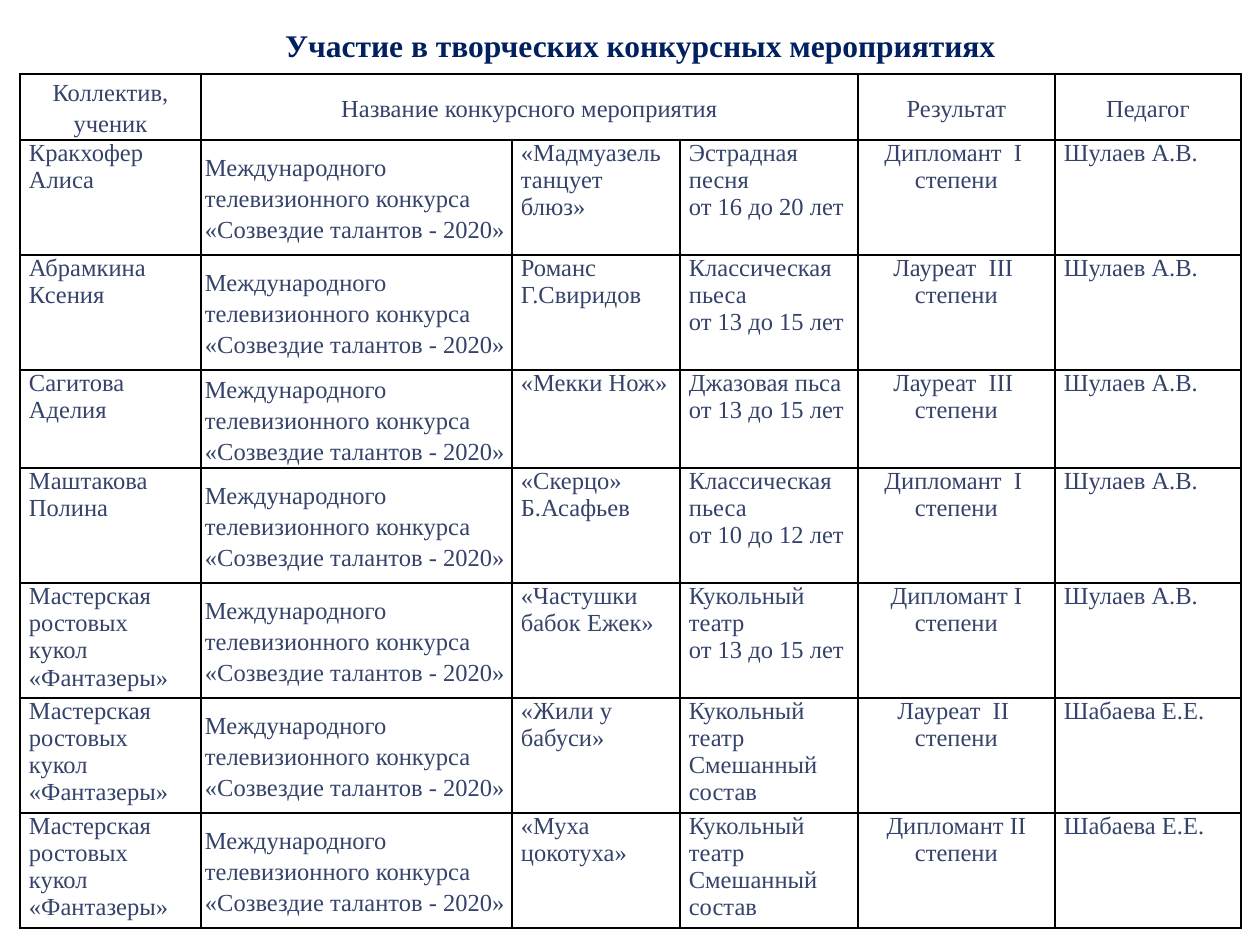
import pptx
import pptx.util
import pptx.dml.color
import pptx.enum.text
import pptx.oxml
import pptx.oxml.ns

EMU_PER_PX = 914400 // 126
CENTER = pptx.enum.text.PP_ALIGN.CENTER
LEFT = pptx.enum.text.PP_ALIGN.LEFT
MIDDLE = pptx.enum.text.MSO_ANCHOR.MIDDLE
TOP = pptx.enum.text.MSO_ANCHOR.TOP

COLUMN_WIDTHS = [181, 311, 168, 178, 197, 186]
ROW_HEIGHTS = [66, 115, 115, 98, 115, 115, 115, 115]
CONTEST_COLUMN = 1
RESULT_COLUMN = 4

HEADINGS = {0: "Коллектив, ученик", 1: "Название конкурсного мероприятия",
            4: "Результат", 5: "Педагог"}
CONTEST = "Международного телевизионного конкурса «Созвездие талантов - 2020»"
PUPPETEERS = "Мастерская ростовых кукол «Фантазеры»"
SHULAEV = "Шулаев А.В."
SHABAEVA = "Шабаева Е.Е."
ENTRIES = [
    ("Кракхофер Алиса", "«Мадмуазель танцует блюз»",
     "Эстрадная песня\nот 16 до 20 лет", "Дипломант  I  степени", SHULAEV),
    ("Абрамкина Ксения", "Романс Г.Свиридов",
     "Классическая пьеса\nот 13 до 15 лет", "Лауреат  III  степени", SHULAEV),
    ("Сагитова Аделия", "«Мекки Нож»",
     "Джазовая пьса\nот 13 до 15 лет", "Лауреат  III  степени", SHULAEV),
    ("Маштакова Полина", "«Скерцо» Б.Асафьев",
     "Классическая пьеса\nот 10 до 12 лет", "Дипломант  I  степени", SHULAEV),
    (PUPPETEERS, "«Частушки бабок Ежек»",
     "Кукольный театр\nот 13 до 15 лет", "Дипломант I степени", SHULAEV),
    (PUPPETEERS, "«Жили у бабуси»",
     "Кукольный театр\nСмешанный состав", "Лауреат  II  степени", SHABAEVA),
    (PUPPETEERS, "«Муха цокотуха»",
     "Кукольный театр\nСмешанный состав", "Дипломант II степени", SHABAEVA),
]


def px(length):
    return pptx.util.Emu(length * EMU_PER_PX)


def color(hex_string):
    return pptx.dml.color.RGBColor.from_string(hex_string)


class AwardsSlide:
    font_name = "Times New Roman"
    title_color = "002060"
    text_color = "35436A"
    border_color = "000000"

    def __init__(self, slide):
        self.slide = slide

    def format_text(self, frame, size, hex_string, align, bold=False):
        for paragraph in frame.paragraphs:
            paragraph.alignment = align
            for run in paragraph.runs:
                run.font.name = self.font_name
                run.font.size = pptx.util.Pt(size)
                run.font.bold = bold
                run.font.color.rgb = color(hex_string)

    def title(self, text, left, top, width, height):
        heading = self.slide.shapes.title
        heading.left, heading.top = px(left), px(top)
        heading.width, heading.height = px(width), px(height)
        frame = heading.text_frame
        frame.text = text
        frame.word_wrap = True
        frame.auto_size = pptx.enum.text.MSO_AUTO_SIZE.NONE
        frame.vertical_anchor = MIDDLE
        self.format_text(frame, 18, self.title_color, CENTER, bold=True)

    def table(self, left, top, column_widths, row_heights):
        grid = self.slide.shapes.add_table(
            len(row_heights), len(column_widths), px(left), px(top),
            px(sum(column_widths)), px(sum(row_heights))).table
        grid.first_row = grid.horz_banding = False
        for column, width in zip(grid.columns, column_widths):
            column.width = px(width)
        for row, height in zip(grid.rows, row_heights):
            row.height = px(height)
        for cell in grid.iter_cells():
            self.border(cell)
            cell.fill.background()
        return grid

    def border(self, cell):
        properties = cell._tc.get_or_add_tcPr()
        for side in ("lnL", "lnR", "lnT", "lnB"):
            properties.append(pptx.oxml.parse_xml(
                f'<a:{side} {pptx.oxml.ns.nsdecls("a")} w="12700"><a:solidFill>'
                f'<a:srgbClr val="{self.border_color}"/></a:solidFill></a:{side}>'))

    def cell(self, cell, text, align=LEFT, spacious=False):
        cell.text = text
        cell.margin_left = cell.margin_right = px(4 if spacious else 9)
        cell.margin_top = cell.margin_bottom = 0
        cell.vertical_anchor = MIDDLE if spacious else TOP
        self.format_text(cell.text_frame, 14, self.text_color, align)
        if spacious:
            for paragraph in cell.text_frame.paragraphs:
                paragraph.line_spacing = 1.15
                paragraph.space_after = pptx.util.Pt(10)


def main():
    presentation = pptx.Presentation()
    presentation.slide_width = pptx.util.Inches(10)
    presentation.slide_height = pptx.util.Inches(7.5)
    awards = AwardsSlide(presentation.slides.add_slide(presentation.slide_layouts[5]))

    awards.title("Участие в творческих конкурсных мероприятиях", 158, 20, 965, 50)
    results = awards.table(20, 74, COLUMN_WIDTHS, ROW_HEIGHTS)
    results.cell(0, 1).merge(results.cell(0, 3))
    for column, heading in HEADINGS.items():
        awards.cell(results.cell(0, column), heading, CENTER, spacious=True)
    for row, (performer, *details) in enumerate(ENTRIES, start=1):
        for column, text in enumerate([performer, CONTEST, *details]):
            awards.cell(results.cell(row, column), text,
                        CENTER if column == RESULT_COLUMN else LEFT,
                        spacious=column == CONTEST_COLUMN)

    presentation.save("out.pptx")


if __name__ == "__main__":
    main()
